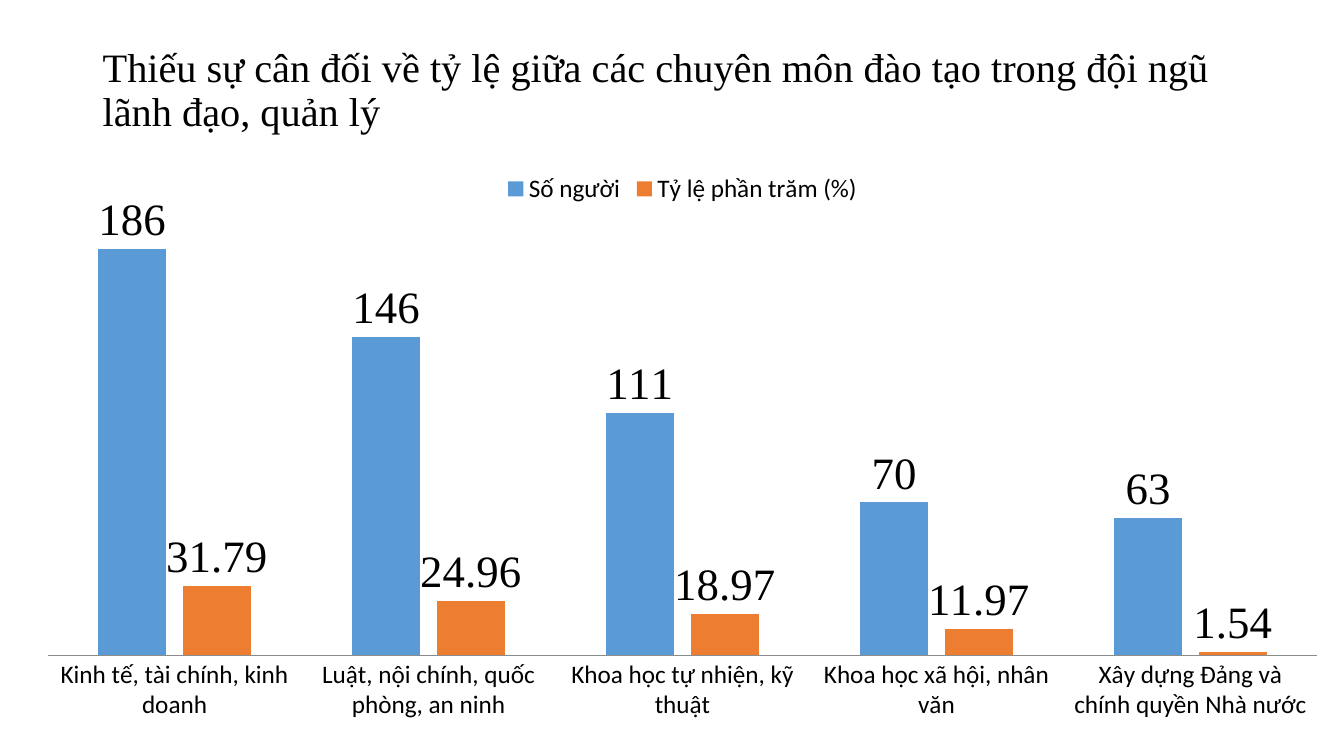
from dataclasses import dataclass

from lxml import etree
from pptx import Presentation
from pptx.chart.data import CategoryChartData
from pptx.dml.color import RGBColor
from pptx.enum.chart import XL_CHART_TYPE as ChartType
from pptx.enum.chart import XL_LABEL_POSITION as LabelPosition
from pptx.enum.chart import XL_LEGEND_POSITION as LegendPosition
from pptx.enum.chart import XL_TICK_MARK as TickMark
from pptx.enum.text import MSO_ANCHOR as Anchor
from pptx.oxml.ns import qn
from pptx.util import Inches, Pt


@dataclass(frozen=True)
class Theme:
    text = RGBColor(0x00, 0x00, 0x00)
    axis = RGBColor(0x8C, 0x8C, 0x8C)
    people = RGBColor(0x5B, 0x9B, 0xD5)
    percent = RGBColor(0xED, 0x7D, 0x31)
    serif = "Times New Roman"
    sans = "Calibri"
    title_size = Pt(28.8)
    chart_size = Pt(18)
    label_size = Pt(32)


theme = Theme()


def set_font(font, name, size):
    font.name = name
    font.size = size
    font.color.rgb = theme.text


# Page
deck = Presentation()
deck.slide_width = Inches(13.33)
deck.slide_height = Inches(7.5)
page = deck.slides.add_slide(deck.slide_layouts[6])

# Title
title_box = page.shapes.add_textbox(Inches(0.92), Inches(0.4), Inches(11.5), Inches(1.01))
title_frame = title_box.text_frame
title_frame.word_wrap = True
title_frame.vertical_anchor = Anchor.MIDDLE
title = title_frame.paragraphs[0]
title.text = "Thiếu sự cân đối về tỷ lệ giữa các chuyên môn đào tạo trong đội ngũ lãnh đạo, quản lý"
title.line_spacing = 0.9
set_font(title.font, theme.serif, theme.title_size)

# Chart data
staff = CategoryChartData()
staff.categories = [
    "Kinh tế, tài chính, kinh doanh",
    "Luật, nội chính, quốc phòng, an ninh",
    "Khoa học tự nhiện, kỹ thuật",
    "Khoa học xã hội, nhân văn",
    "Xây dựng Đảng và chính quyền Nhà nước",
]
staff.add_series("Số người", [186, 146, 111, 70, 63])
staff.add_series("Tỷ lệ phần trăm (%)", [31.79, 24.96, 18.97, 11.97, 1.54])

# Chart
chart = page.shapes.add_chart(
    ChartType.COLUMN_CLUSTERED,
    Inches(0.21), Inches(1.6), Inches(13.12), Inches(5.7), staff,
).chart
chart.has_title = False
set_font(chart.font, theme.sans, theme.chart_size)
chart.has_legend = True
chart.legend.position = LegendPosition.TOP
chart.legend.include_in_layout = False

# Axes
category_axis = chart.category_axis
category_axis.major_tick_mark = TickMark.NONE
category_axis.format.line.color.rgb = theme.axis
category_axis.format.line.width = Pt(0.75)
value_axis = chart.value_axis
value_axis.minimum_scale = 0
value_axis.maximum_scale = 200
value_axis.has_major_gridlines = False
value_axis.visible = False

# Columns and their labels
plot = chart.plots[0]
plot.gap_width = 150
plot.overlap = -25
plot.vary_by_categories = False
for series, color in zip(plot.series, (theme.people, theme.percent)):
    series.format.fill.solid()
    series.format.fill.fore_color.rgb = color
    labels = series.data_labels
    labels.show_value = True
    labels.position = LabelPosition.OUTSIDE_END
    set_font(labels.font, theme.serif, theme.label_size)

# Plot area as fractions of the chart frame
plot_area = plot_element = chart.element.find(".//" + qn("c:plotArea"))
for old_layout in plot_area.findall(qn("c:layout")):
    plot_area.remove(old_layout)
layout = etree.Element(qn("c:layout"))
plot_area.insert(0, layout)
manual = etree.SubElement(layout, qn("c:manualLayout"))
for tag, value in (
    ("layoutTarget", "inner"), ("xMode", "edge"), ("yMode", "edge"),
    ("x", "0.02"), ("y", "0.1"), ("w", "0.96"), ("h", "0.76"),
):
    etree.SubElement(manual, qn("c:" + tag)).set("val", value)

deck.save("out.pptx")
